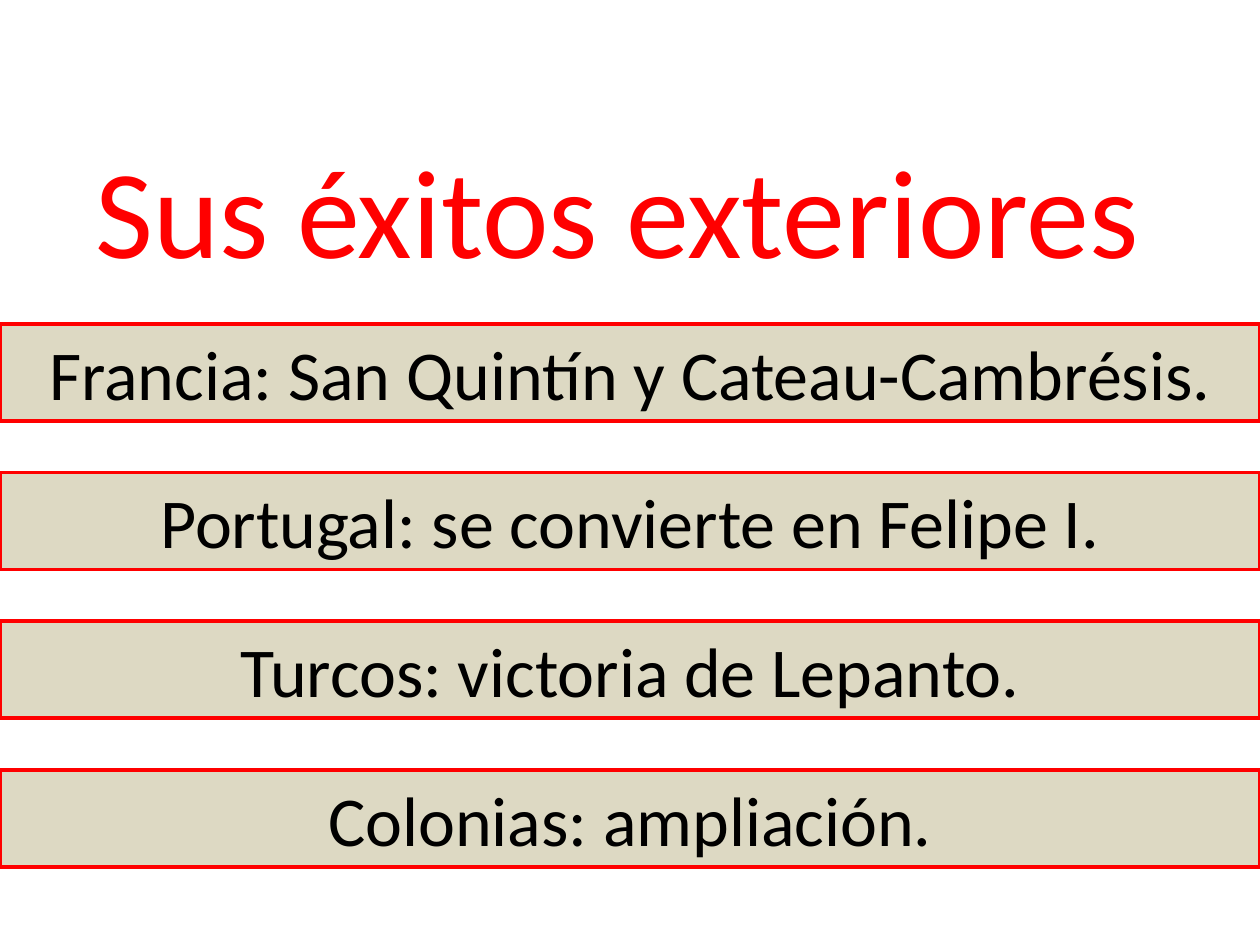
import dataclasses

import pptx
import pptx.dml.color
import pptx.enum.shapes
import pptx.enum.text
import pptx.util


@dataclasses.dataclass(frozen=True)
class Theme:
    font: str = "Calibri"
    accent: str = "FF0000"
    bar_fill: str = "DDD9C3"
    text: str = "000000"
    title_size: int = 72
    bar_size: int = 40
    line_width: int = 2


def color(code):
    return pptx.dml.color.RGBColor.from_string(code)


class SlideBuilder:
    TITLE_ONLY = 5

    def __init__(self, deck, theme):
        self.deck = deck
        self.theme = theme
        self.page = deck.slides.add_slide(deck.slide_layouts[self.TITLE_ONLY])

    def area(self, left, top, width, height):
        """Turn shares of the slide's size into lengths."""
        across, down = self.deck.slide_width, self.deck.slide_height
        return (round(left * across), round(top * down),
                round(width * across), round(height * down))

    def add_text(self, box, text, size, code):
        frame = box.text_frame
        frame.word_wrap = True
        frame.auto_size = pptx.enum.text.MSO_AUTO_SIZE.NONE
        frame.vertical_anchor = pptx.enum.text.MSO_ANCHOR.MIDDLE
        para = frame.paragraphs[0]
        para.alignment = pptx.enum.text.PP_ALIGN.CENTER
        span = para.add_run()
        span.text = text
        span.font.name = self.theme.font
        span.font.size = pptx.util.Pt(size)
        span.font.color.rgb = color(code)

    def title(self, text, *shares):
        box = self.page.shapes.title
        box.left, box.top, box.width, box.height = self.area(*shares)
        self.add_text(box, text, self.theme.title_size, self.theme.accent)

    def bar(self, text, *shares):
        box = self.page.shapes.add_shape(
            pptx.enum.shapes.MSO_SHAPE.RECTANGLE, *self.area(*shares))
        box.shadow.inherit = False
        box.fill.solid()
        box.fill.fore_color.rgb = color(self.theme.bar_fill)
        box.line.color.rgb = color(self.theme.accent)
        box.line.width = pptx.util.Pt(self.theme.line_width)
        self.add_text(box, text, self.theme.bar_size, self.theme.text)

    def bars(self, texts, top, height, step):
        """Stack full-width bars at equal steps."""
        for row, text in enumerate(texts):
            self.bar(text, 0, top + row * step, 1, height)


def main():
    deck = pptx.Presentation()
    deck.slide_width = pptx.util.Inches(10)
    deck.slide_height = pptx.util.Inches(7.5)

    builder = SlideBuilder(deck, Theme())
    builder.title("Sus éxitos exteriores", 0.05, 0.13, 0.88, 0.18)
    successes = [
        "Francia: San Quintín y Cateau-Cambrésis.",
        "Portugal: se convierte en Felipe I.",
        "Turcos: victoria de Lepanto.",
        "Colonias: ampliación.",
    ]
    builder.bars(successes, top=2.57 / 7.5, height=0.77 / 7.5, step=1.18 / 7.5)
    deck.save("out.pptx")


if __name__ == "__main__":
    main()
